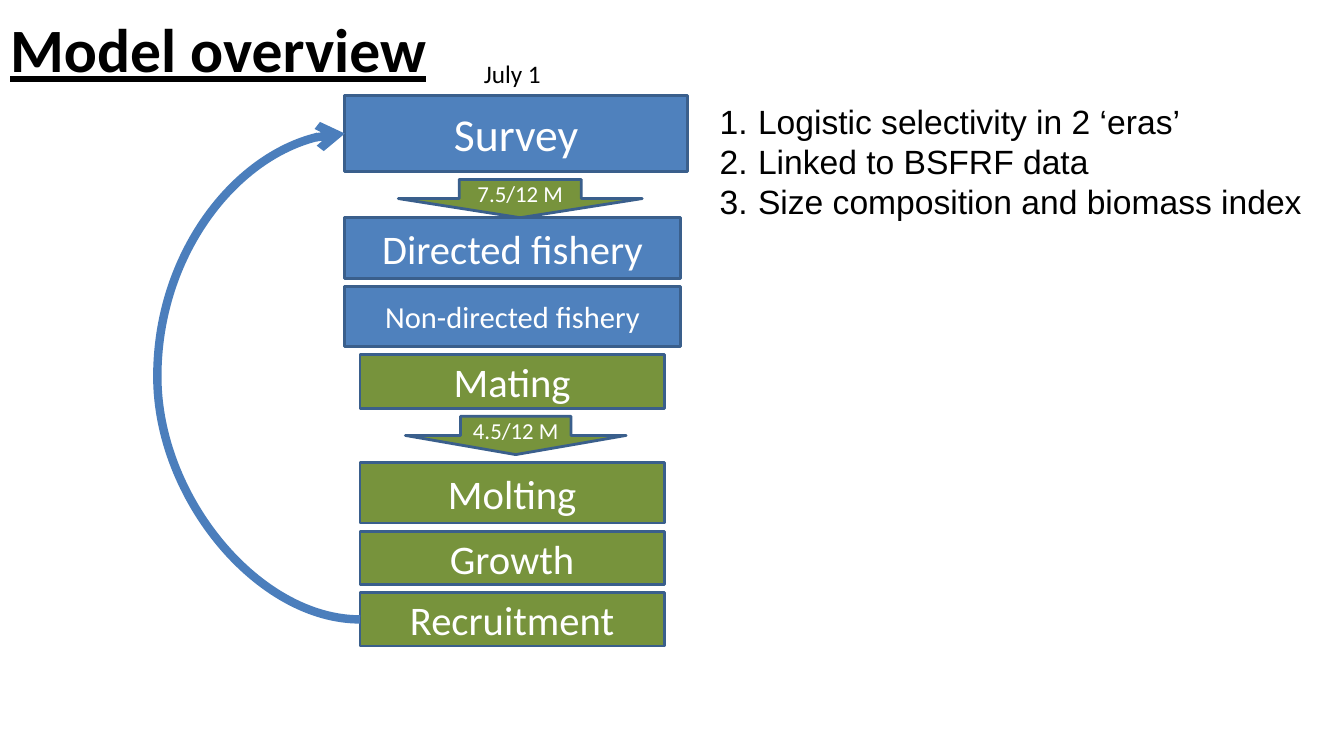
import pptx
import pptx.util
import pptx.dml.color
import pptx.enum.shapes
import pptx.enum.text
import pptx.oxml.ns
import lxml.etree

Inches = pptx.util.Inches
RECTANGLE = pptx.enum.shapes.MSO_SHAPE.RECTANGLE
DOWN_ARROW = pptx.enum.shapes.MSO_SHAPE.DOWN_ARROW
BLUE, GREEN, OUTLINE, LOOP = "4F81BD", "77933C", "3A5F8C", "4B7EBC"
WHITE, BLACK = "FFFFFF", "000000"
STEP_GAP = 0.08

# name, preset, fill, left offset, width, height, gap below, text size
STEPS = [
    ("Survey", RECTANGLE, BLUE, 0, 3.4, 0.75, STEP_GAP, 32.6),
    ("7.5/12 M", DOWN_ARROW, GREEN, 0.53, 2.42, 0.38, 0, 16.3),
    ("Directed fishery", RECTANGLE, BLUE, 0, 3.33, 0.6, STEP_GAP, 29),
    ("Non-directed fishery", RECTANGLE, BLUE, 0, 3.33, 0.6, STEP_GAP, 21.8),
    ("Mating", RECTANGLE, GREEN, 0.15, 3.02, 0.53, STEP_GAP, 29),
    ("4.5/12 M", DOWN_ARROW, GREEN, 0.6, 2.19, 0.38, STEP_GAP, 16.3),
    ("Molting", RECTANGLE, GREEN, 0.15, 3.02, 0.6, STEP_GAP, 29),
    ("Growth", RECTANGLE, GREEN, 0.15, 3.02, 0.53, STEP_GAP, 29),
    ("Recruitment", RECTANGLE, GREEN, 0.15, 3.02, 0.53, STEP_GAP, 29),
]
SURVEY_NOTES = [
    "Logistic selectivity in 2 ‘eras’",
    "Linked to BSFRF data",
    "Size composition and biomass index",
]


def color(value):
    """Return the colour for a hex string."""
    return pptx.dml.color.RGBColor.from_string(value)


def add_child(parent, tag, **attributes):
    """Append a DrawingML element to a parent element."""
    return lxml.etree.SubElement(parent, pptx.oxml.ns.qn(tag), attributes)


def format_text(text_frame, size, font_name, hex_color):
    """Format every run of a text frame."""
    for paragraph in text_frame.paragraphs:
        for run in paragraph.runs:
            run.font.size = pptx.util.Pt(size)
            run.font.name = font_name
            run.font.color.rgb = color(hex_color)


def add_title(slide, left, top, width, height):
    """Place the underlined slide title."""
    title = slide.shapes.title
    title.left, title.top = Inches(left), Inches(top)
    title.width, title.height = Inches(width), Inches(height)
    text_frame = title.text_frame
    text_frame.text = "Model overview"
    text_frame.vertical_anchor = pptx.enum.text.MSO_ANCHOR.MIDDLE
    paragraph = text_frame.paragraphs[0]
    paragraph.alignment = pptx.enum.text.PP_ALIGN.LEFT
    paragraph.line_spacing = 0.9
    format_text(text_frame, 44, "Calibri", BLACK)
    paragraph.runs[0].font.bold = True
    paragraph.runs[0].font.underline = True


def add_text_box(slide, left, top, width, height, text, size, font_name):
    """Add a wrapping text box and return its text frame."""
    box = slide.shapes.add_textbox(
        Inches(left), Inches(top), Inches(width), Inches(height))
    text_frame = box.text_frame
    text_frame.word_wrap = True
    text_frame.text = text
    format_text(text_frame, size, font_name, BLACK)
    return text_frame


def add_numbered_notes(slide, left, top, width, height):
    """Add the numbered notes on the survey."""
    text_frame = add_text_box(
        slide, left, top, width, height, "\n".join(SURVEY_NOTES), 24, "Arial")
    for paragraph in text_frame.paragraphs:
        properties = paragraph._p.get_or_add_pPr()
        properties.set("marL", str(Inches(0.38)))
        properties.set("indent", str(-Inches(0.38)))
        add_child(properties, "a:buFont", typeface="+mj-lt")
        add_child(properties, "a:buAutoNum", type="arabicPeriod")


def add_step(slide, left, top, width, height, name, preset, fill, size):
    """Add one outlined step of the model year."""
    shape = slide.shapes.add_shape(
        preset, Inches(left), Inches(top), Inches(width), Inches(height))
    shape.shadow.inherit = False
    shape.fill.solid()
    shape.fill.fore_color.rgb = color(fill)
    shape.line.color.rgb = color(OUTLINE)
    shape.line.width = pptx.util.Pt(2)
    text_frame = shape.text_frame
    text_frame.text = name
    text_frame.word_wrap = preset == RECTANGLE
    text_frame.vertical_anchor = pptx.enum.text.MSO_ANCHOR.MIDDLE
    text_frame.paragraphs[0].alignment = pptx.enum.text.PP_ALIGN.CENTER
    format_text(text_frame, size, "Calibri", WHITE)
    return shape


def add_year_loop(slide, last_step, first_step):
    """Curve an arrow from the last step back to the first."""
    connector = slide.shapes.add_connector(
        pptx.enum.shapes.MSO_CONNECTOR.CURVE, 0, 0, 0, 0)
    connector.begin_connect(last_step, 1)
    connector.end_connect(first_step, 1)
    connector.line.color.rgb = color(LOOP)
    connector.line.width = pptx.util.Pt(6)
    properties = connector._element.spPr
    add_child(connector.line._get_or_add_ln(), "a:tailEnd", type="arrow")
    add_child(properties, "a:effectLst")
    transform = properties.find(pptx.oxml.ns.qn("a:xfrm"))
    for flip in ("flipH", "flipV"):
        transform.attrib.pop(flip, None)
    transform.set("rot", "10800000")
    adjustments = properties.find(".//" + pptx.oxml.ns.qn("a:avLst"))
    add_child(adjustments, "a:gd", name="adj1", fmla="val 1340000")


def add_model_year(slide, left, top):
    """Stack the steps of the model year and close the loop."""
    shapes = []
    for name, preset, fill, offset, width, height, gap, size in STEPS:
        shapes.append(add_step(
            slide, left + offset, top, width, height, name, preset, fill, size))
        top += height + gap
    add_year_loop(slide, shapes[-1], shapes[0])


def main():
    """Build the model overview slide."""
    presentation = pptx.Presentation()
    presentation.slide_width = Inches(13.33)
    presentation.slide_height = Inches(7.5)
    slide = presentation.slides.add_slide(presentation.slide_layouts[5])
    add_title(slide, 0, -0.2, 11.5, 1.45)
    add_model_year(slide, 3.42, 0.95)
    add_numbered_notes(slide, 7.04, 0.95, 6.16, 1.31)
    add_text_box(slide, 4.7, 0.53, 2.34, 0.42, "July 1", 18, "Calibri")
    presentation.save("out.pptx")


if __name__ == "__main__":
    main()
